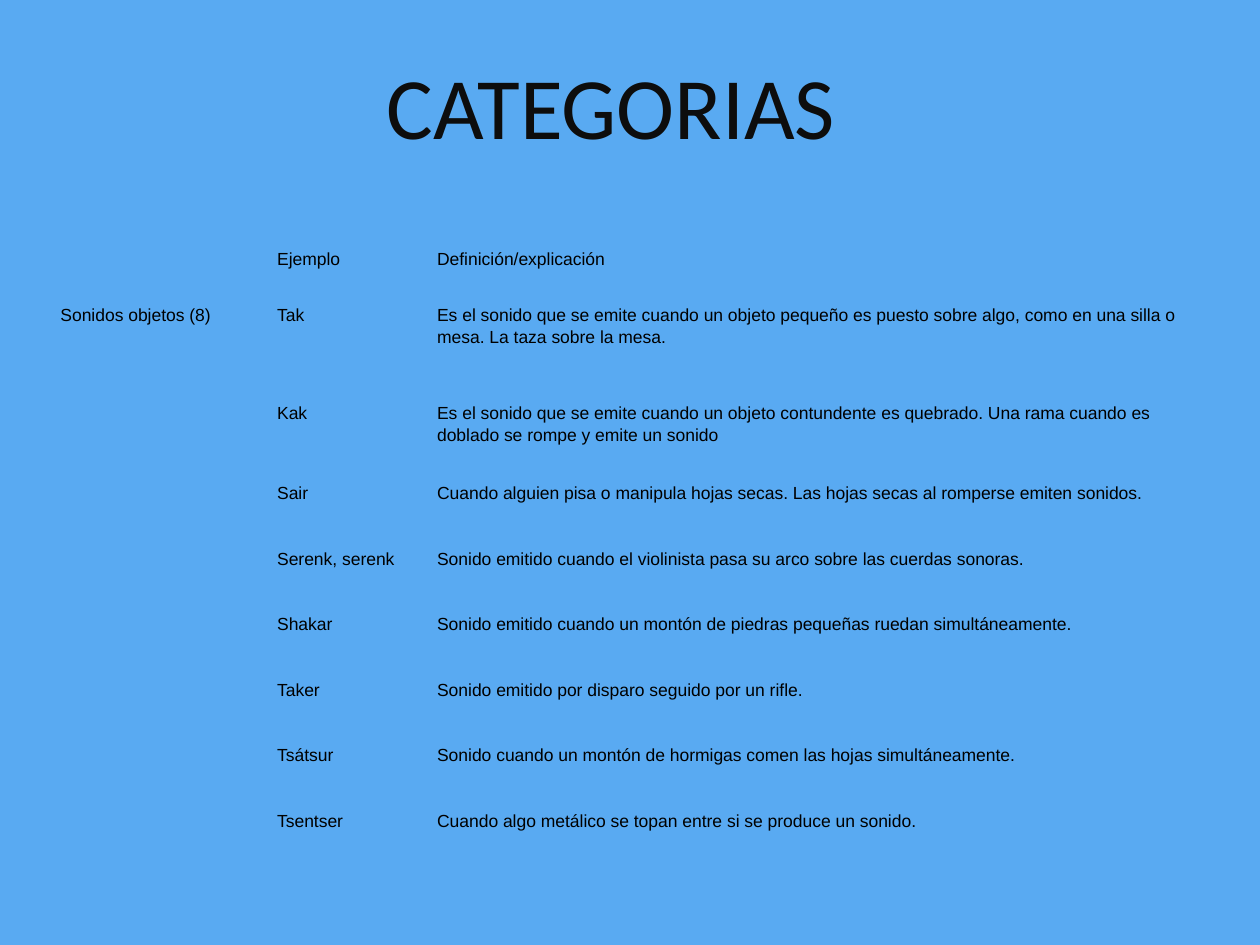
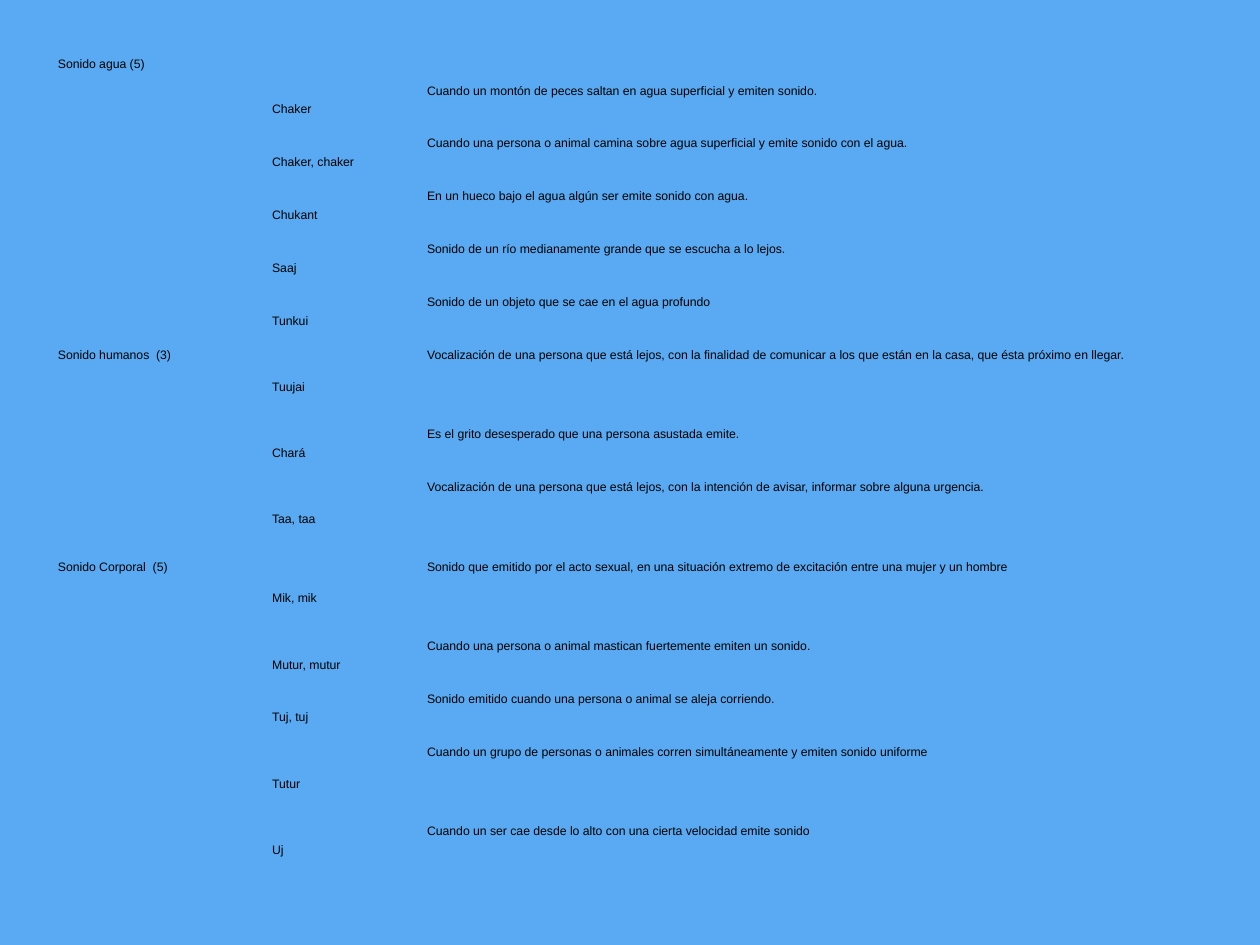
from dataclasses import dataclass

from lxml import etree
from pptx import Presentation
from pptx import util as u
from pptx.dml.color import RGBColor
from pptx.enum import text
from pptx.oxml.ns import qn

PX = 9144  # EMU in one px, with 100 px to the inch
BACKGROUND, TITLE_COLOR, BODY_COLOR = "59AAF2", "0D0D0D", "000000"
TITLE_FONT, BODY_FONT = "Calibri", "Arial"
TOP, MIDDLE, BOTTOM = (
    text.MSO_ANCHOR.TOP, text.MSO_ANCHOR.MIDDLE, text.MSO_ANCHOR.BOTTOM)


@dataclass
class Category:
    name: str
    sounds: list[tuple[str, str]]  # example, definition


@dataclass
class SoundTable:
    left: int
    top: int
    columns: list[int]
    rows: list[int]
    font_size: int
    inset: int
    example_anchor: text.MSO_ANCHOR
    header: list[tuple[str, str]]
    categories: list[Category]


OBJECT_SOUNDS = SoundTable(
    left=43, top=162, columns=[172, 127, 622],
    rows=[52, 26, 78, 64] + [52] * 6,
    font_size=10, inset=5, example_anchor=TOP,
    header=[("Ejemplo", "Definición/explicación"), ("", "")],
    categories=[
        Category("Sonidos objetos (8)", [
            ("Tak", "Es el sonido que se emite cuando un objeto pequeño es puesto sobre algo, "
                    "como en una silla o mesa. La taza sobre la mesa."),
            ("Kak", "Es el sonido que se emite cuando un objeto contundente es quebrado. "
                    "Una rama cuando es doblado se rompe y emite un sonido"),
            ("Sair", "Cuando alguien pisa o manipula hojas secas. "
                     "Las hojas secas al romperse emiten sonidos."),
            ("Serenk, serenk", "Sonido emitido cuando el violinista pasa su arco "
                               "sobre las cuerdas sonoras."),
            ("Shakar", "Sonido emitido cuando un montón de piedras pequeñas "
                       "ruedan simultáneamente."),
            ("Taker", "Sonido emitido por disparo seguido por un rifle."),
            ("Tsátsur", "Sonido cuando un montón de hormigas comen las hojas simultáneamente."),
            ("Tsentser", "Cuando algo metálico se topan entre si se produce un sonido."),
        ]),
    ])

OTHER_SOUNDS = SoundTable(
    left=43, top=44, columns=[170, 123, 620],
    rows=[21] + [42] * 5 + [63, 42, 63, 63, 42, 42, 63, 42],
    font_size=7, inset=3, example_anchor=MIDDLE,
    header=[],
    categories=[
        Category("Sonido agua (5)", [
            ("", ""),
            ("Chaker", "Cuando un montón de peces saltan en agua superficial y emiten sonido."),
            ("Chaker, chaker", "Cuando una persona o animal camina sobre agua superficial "
                               "y emite sonido con el agua."),
            ("Chukant", "En un hueco bajo el agua algún ser emite sonido con agua."),
            ("Saaj", "Sonido de un río medianamente grande que se escucha a lo lejos."),
            ("Tunkui", "Sonido de un objeto que se cae en el agua profundo"),
        ]),
        Category("Sonido humanos  (3)", [
            ("Tuujai", "Vocalización de una persona que está lejos, con la finalidad de comunicar "
                       "a los que están en la casa, que ésta próximo en llegar."),
            ("Chará", "Es el grito desesperado que una persona asustada emite."),
            ("Taa, taa", "Vocalización de una persona que está lejos, con la intención de avisar, "
                         "informar sobre alguna urgencia."),
        ]),
        Category("Sonido Corporal  (5)", [
            ("Mik, mik", "Sonido que emitido por el acto sexual, en una situación extremo "
                         "de excitación entre una mujer y un hombre"),
            ("Mutur, mutur", "Cuando una persona o animal mastican fuertemente emiten un sonido."),
            ("Tuj, tuj", "Sonido emitido cuando una persona o animal se aleja corriendo."),
            ("Tutur", "Cuando un grupo de personas o animales corren simultáneamente "
                      "y emiten sonido uniforme"),
            ("Uj", "Cuando un ser cae desde lo alto con una cierta velocidad emite sonido"),
        ]),
    ])


def px(length: int) -> int:
    return length * PX


def color(value: str) -> RGBColor:
    return RGBColor.from_string(value)


def assign(target, values: dict) -> None:
    for name, value in values.items():
        setattr(target, name, value)


def write(paragraph, content: str, font_name: str, size: int, font_color: str) -> None:
    run = paragraph.add_run()
    run.text = content
    assign(run.font, {"name": font_name, "size": u.Pt(size), "bold": False})
    run.font.color.rgb = color(font_color)


def add_title(slide, content: str) -> None:
    title = slide.shapes.title
    assign(title, {"left": px(43), "top": px(0), "width": px(900), "height": px(125)})
    assign(title.text_frame, {
        "margin_left": 0, "margin_top": px(5), "margin_right": 0, "margin_bottom": 0,
        "vertical_anchor": BOTTOM, "word_wrap": True, "auto_size": text.MSO_AUTO_SIZE.NONE})
    paragraph = title.text_frame.paragraphs[0]
    paragraph.alignment = text.PP_ALIGN.CENTER
    write(paragraph, content, TITLE_FONT, 50, TITLE_COLOR)


def fill_cell(cell, content: str, anchor: text.MSO_ANCHOR, sounds: SoundTable) -> None:
    # No borders and no fill
    properties = cell._tc.get_or_add_tcPr()
    for side in ("a:lnL", "a:lnR", "a:lnT", "a:lnB"):
        etree.SubElement(etree.SubElement(properties, qn(side)), qn("a:noFill"))
    cell.fill.background()
    assign(cell, {
        "margin_left": px(sounds.inset), "margin_right": px(sounds.inset),
        "margin_top": 0, "margin_bottom": 0, "vertical_anchor": anchor})
    paragraph = cell.text_frame.paragraphs[0]
    paragraph.line_spacing = 1.15
    if content:
        write(paragraph, content, BODY_FONT, sounds.font_size, BODY_COLOR)
    else:
        # Empty cells keep the small size so that low rows do not grow
        etree.SubElement(paragraph._p, qn("a:endParaRPr"), sz=str(sounds.font_size * 100))


def add_sound_table(slide, sounds: SoundTable) -> None:
    frame = slide.shapes.add_table(
        len(sounds.rows), len(sounds.columns), px(sounds.left), px(sounds.top),
        px(sum(sounds.columns)), px(sum(sounds.rows)))
    table = frame.table
    assign(table, {"first_row": False, "horz_banding": False})
    for column, width in zip(table.columns, sounds.columns):
        column.width = px(width)
    for row, height in zip(table.rows, sounds.rows):
        row.height = px(height)

    # Header rows, then one block of rows for each category
    lines = [("", *entry, BOTTOM) for entry in sounds.header]
    for category in sounds.categories:
        first = len(lines)
        for index, entry in enumerate(category.sounds):
            lines.append((category.name if index == 0 else "", *entry, sounds.example_anchor))
        table.cell(first, 0).merge(table.cell(len(lines) - 1, 0))

    for row, (name, example, definition, anchor) in enumerate(lines):
        definition_anchor = BOTTOM if anchor == BOTTOM else TOP
        fill_cell(table.cell(row, 0), name, TOP, sounds)
        fill_cell(table.cell(row, 1), example, anchor, sounds)
        fill_cell(table.cell(row, 2), definition, definition_anchor, sounds)


def main() -> None:
    presentation = Presentation()
    assign(presentation, {"slide_width": px(1000), "slide_height": px(750)})
    background = presentation.slide_master.background.fill
    background.solid()
    background.fore_color.rgb = color(BACKGROUND)
    title_only, blank = presentation.slide_layouts[5], presentation.slide_layouts[6]

    # Slide 1: sounds of objects
    slide = presentation.slides.add_slide(title_only)
    add_title(slide, "CATEGORIAS ")
    add_sound_table(slide, OBJECT_SOUNDS)

    # Slide 2: sounds of water, people and the body
    slide = presentation.slides.add_slide(blank)
    add_sound_table(slide, OTHER_SOUNDS)

    presentation.save("out.pptx")


if __name__ == "__main__":
    main()
